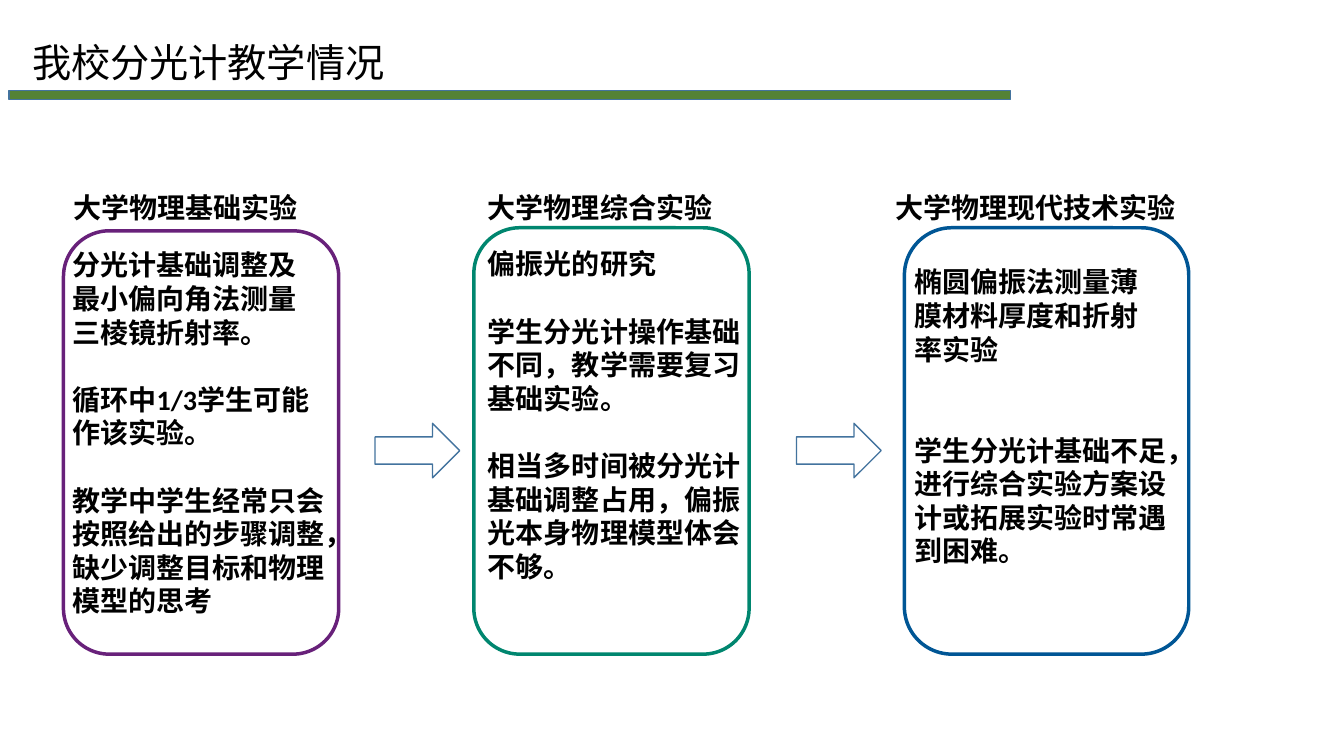
from pptx import Presentation
from pptx.dml.color import RGBColor
from pptx.enum.shapes import MSO_SHAPE
from pptx.util import Inches, Pt

RECT = MSO_SHAPE.RECTANGLE
ROUND = MSO_SHAPE.ROUNDED_RECTANGLE
ARROW = MSO_SHAPE.RIGHT_ARROW
BLACK = RGBColor(0x00, 0x00, 0x00)
WHITE = RGBColor(0xFF, 0xFF, 0xFF)
GREEN = RGBColor(0x54, 0x82, 0x35)
BLUE = RGBColor(0x43, 0x73, 0x9E)
PURPLE = RGBColor(0x68, 0x21, 0x7A)
TEAL = RGBColor(0x00, 0x86, 0x6F)
NAVY = RGBColor(0x00, 0x56, 0x95)
FONT = "Calibri"
LEAD = 24

BASIC = [
    (0, "分光计基础调整及"),
    (0, "最小偏向角法测量"),
    (0, "三棱镜折射率。"),
    (1, "循环中1/3学生可能"),
    (0, "作该实验。"),
    (1, "教学中学生经常只会按照给出的步骤调整，缺少调整目标和物理模型的思考"),
]
MIXED = [
    (0, "偏振光的研究"),
    (1, "学生分光计操作基础"),
    (0, "不同，教学需要复习"),
    (0, "基础实验。"),
    (1, "相当多时间被分光计"),
    (0, "基础调整占用，偏振"),
    (0, "光本身物理模型体会"),
    (0, "不够。"),
]
MODERN = [
    (0, "椭圆偏振法测量薄"),
    (0, "膜材料厚度和折射"),
    (0, "率实验"),
    (2, "学生分光计基础不足，进行综合实验方案设"),
    (0, "计或拓展实验时常遇"),
    (0, "到困难。"),
]

# Each stage: frame box, colour, heading box, heading, body box, body lines
STAGES = [
    ((0.63, 2.29, 2.73, 4.2), PURPLE, (0, -0.45, 2.91, 0.52), "大学物理基础实验",
     (-0.01, 0.12, 2.92, 4.14), BASIC),
    ((4.7, 2.26, 2.73, 4.23), TEAL, (0.04, -0.42, 3.03, 0.52), "大学物理综合实验",
     (0.04, 0.14, 3.03, 3.47), MIXED),
    ((8.97, 2.26, 2.82, 4.23), NAVY, (-0.19, -0.42, 3.45, 0.52), "大学物理现代技术实验",
     (0, 0.32, 3.12, 4.14), MODERN),
]


def add_text(slide, box, lines, size, bold=False, wrap=True):
    """Write lines of (blank lines above, text) in a text box."""
    frame = slide.shapes.add_textbox(*map(Inches, box)).text_frame
    frame.word_wrap = wrap
    for i, (gap, text) in enumerate(lines):
        para = frame.paragraphs[0] if i == 0 else frame.add_paragraph()
        para.space_before = Pt(gap * LEAD)
        run = para.add_run()
        run.text = text
        run.font.name = FONT
        run.font.size = Pt(size)
        run.font.bold = bold
        run.font.color.rgb = BLACK


def add_form(slide, kind, box, line, width, fill=None):
    """Draw an outlined preset shape, filled if a colour is given."""
    form = slide.shapes.add_shape(kind, *map(Inches, box))
    form.shadow.inherit = False
    if fill is None:
        form.fill.background()
    else:
        form.fill.solid()
        form.fill.fore_color.rgb = fill
    form.line.color.rgb = line
    form.line.width = Pt(width)


def add_title(slide, box, text):
    """Place the slide title above its green bar."""
    x, y, w, h = box
    add_form(slide, RECT, (x, y + 0.57, w, h - 0.57), BLUE, 1, GREEN)
    add_text(slide, (x + 0.13, y, 3.74, 0.57), [(0, text)], 28, wrap=False)


def add_stage(slide, box, color, head_box, head, body_box, body):
    """Place one course stage: heading, body text and rounded frame."""
    def inside(part):
        return box[0] + part[0], box[1] + part[1], part[2], part[3]

    add_text(slide, inside(head_box), [(0, head)], 20, True)
    add_text(slide, inside(body_box), body, 20, True)
    add_form(slide, ROUND, box, color, 2.5)


def main():
    """Build the slide and save it."""
    deck = Presentation()
    deck.slide_width, deck.slide_height = Inches(13.33), Inches(7.5)
    slide = deck.slides.add_slide(deck.slide_layouts[6])
    add_title(slide, (0.09, 0.33, 9.93, 0.66), "我校分光计教学情况")
    for stage in STAGES:
        add_stage(slide, *stage)
    for x in (3.72, 7.9):
        add_form(slide, ARROW, (x, 4.2, 0.84, 0.54), BLUE, 1, WHITE)
    deck.save("out.pptx")


if __name__ == "__main__":
    main()
